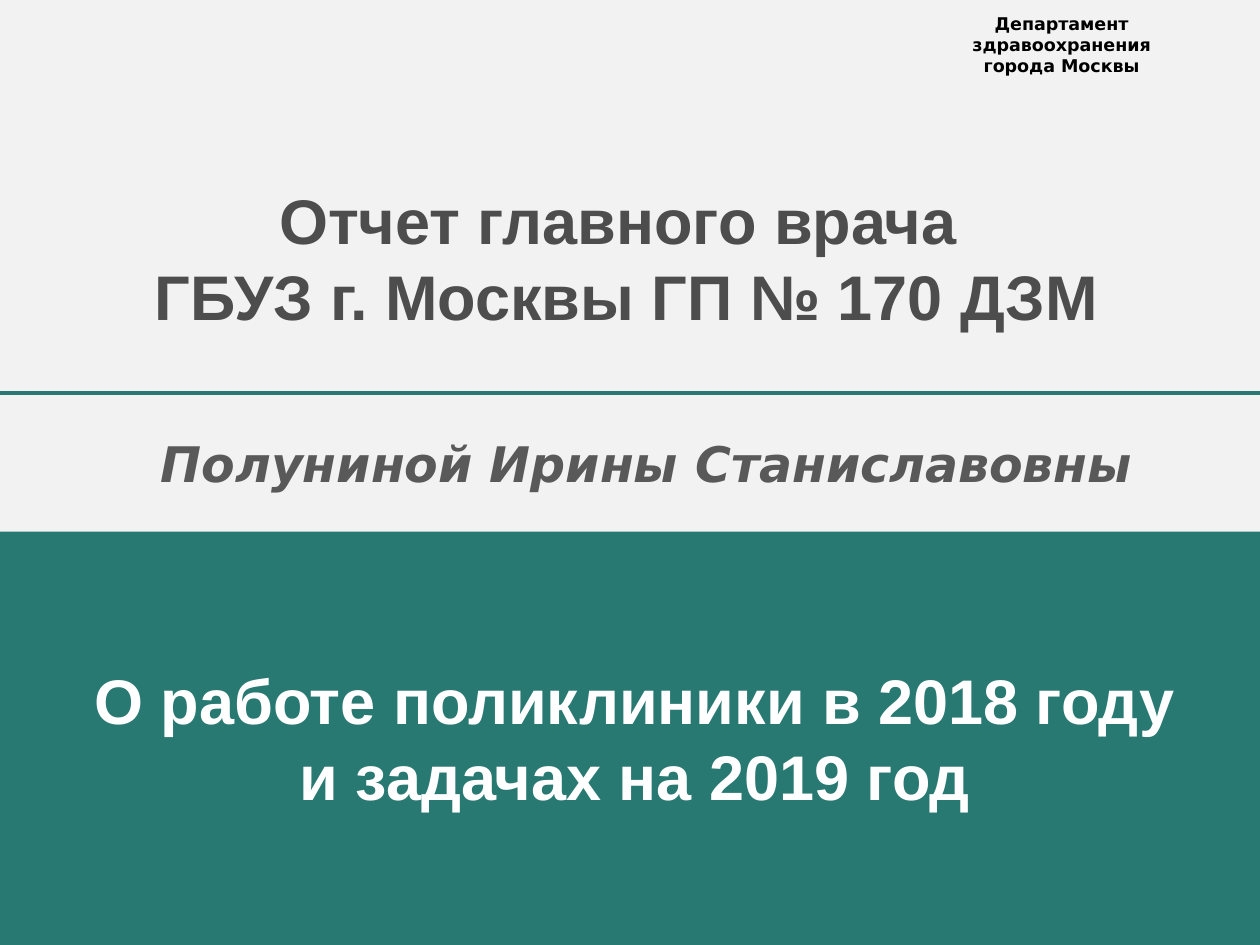
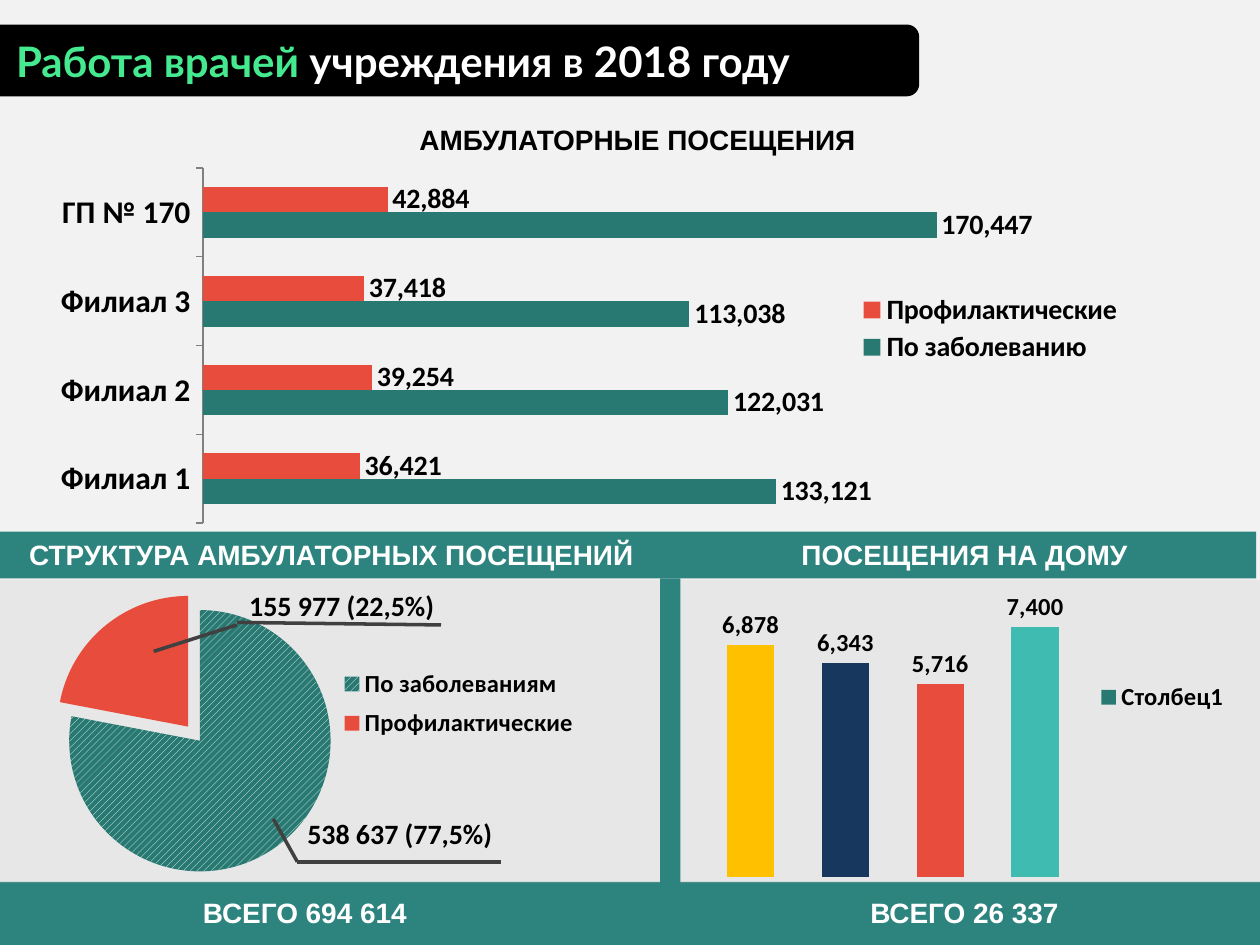
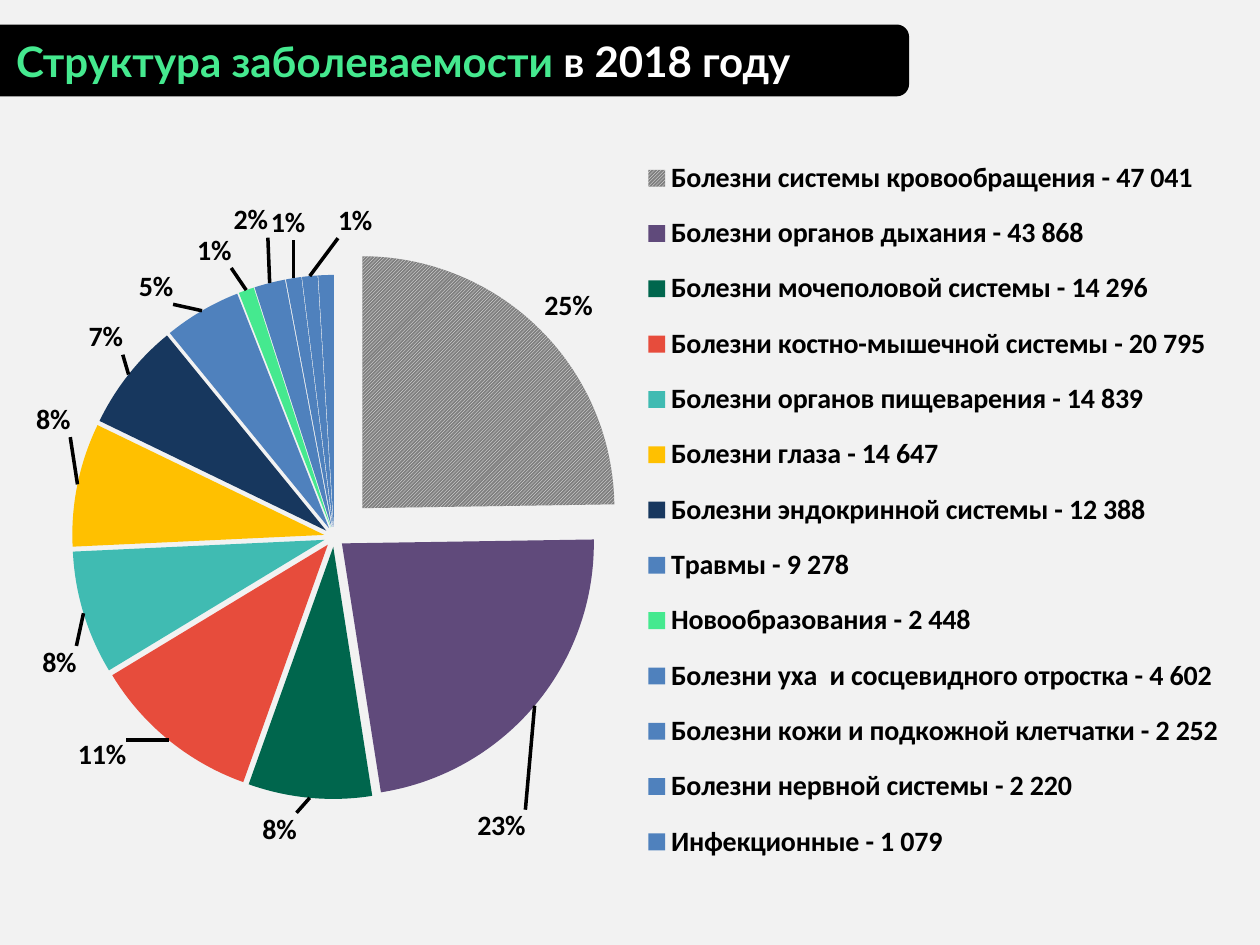
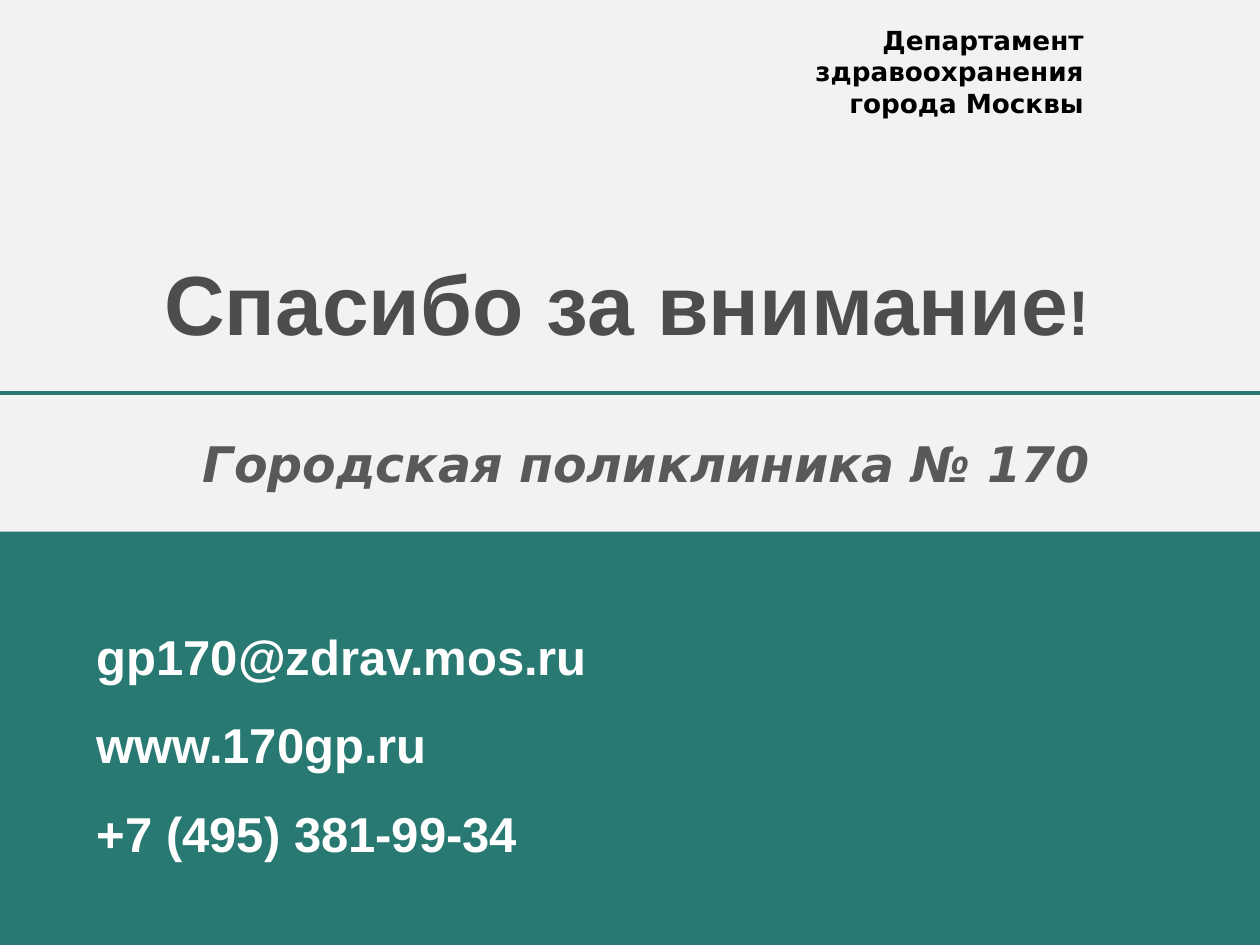
"""Builds the four-slide 2018 report of the city clinic."""
from dataclasses import dataclass
from typing import NamedTuple, Optional

import lxml.etree
import pptx
import pptx.chart.data
import pptx.dml.color
import pptx.enum.chart
import pptx.enum.dml
import pptx.enum.shapes
import pptx.enum.text
import pptx.oxml.ns
import pptx.util

COLS, ROWS = 100, 75
UNIT = pptx.util.Inches(10) // COLS
COLORS = {
    "paper": "F2F2F2", "teal": "297973", "band": "2D837D", "veil": "BFBFBF",
    "black": "000000", "white": "FFFFFF", "green": "45E98F", "title": "4D4D4D",
    "name": "595959", "callout": "404040", "red": "E74C3C", "yellow": "FFC000",
    "navy": "17375E", "aqua": "40BBB2", "grey": "808080", "purple": "604A7B",
    "forest": "00664D", "blue": "4F81BD",
}
CHART = pptx.enum.chart.XL_CHART_TYPE
SHAPE = pptx.enum.shapes.MSO_SHAPE
PATTERN = pptx.enum.dml.MSO_PATTERN
ALIGN = pptx.enum.text.PP_ALIGN
DEPARTMENT = "Департамент здравоохранения города Москвы"
qn = pptx.oxml.ns.qn


class Box(NamedTuple):
    """A place on the grid, in columns and rows."""
    col: float
    row: float
    cols: float
    rows: float


class Run(NamedTuple):
    """A stretch of text in one style."""
    text: str
    size: float
    color: str
    font: str = "Arial"
    italic: bool = False


class Line(NamedTuple):
    """A straight line on the grid."""
    col1: float
    row1: float
    col2: float
    row2: float


class Layout(NamedTuple):
    """A place inside a chart, in shares of its size."""
    x: float
    y: float
    w: float
    h: float


class Series(NamedTuple):
    """One named row of chart values."""
    name: str
    values: tuple
    color: str = "teal"


@dataclass
class ChartSpec:
    """What a chart shows and how it is laid out."""
    kind: CHART
    box: Box
    categories: tuple
    series: tuple
    plot: Layout
    legend: Layout
    legend_size: int
    point_colors: tuple = ()
    pattern: Optional[PATTERN] = None
    explosions: tuple = ()
    gap: int = 150
    top: int = 0
    label_size: int = 0
    label_shifts: tuple = ()


def rgb(name: str) -> pptx.dml.color.RGBColor:
    """Return a colour of the palette."""
    return pptx.dml.color.RGBColor.from_string(COLORS[name])


def grid(*steps: float) -> list:
    """Turn grid steps into lengths."""
    return [round(step * UNIT) for step in steps]


def child(parent, tag: str, **attrs):
    """Append an XML element."""
    return lxml.etree.SubElement(parent, qn(tag), **attrs)


def style_font(font, size: float, color: str = "black", name: str = "Calibri",
               bold: bool = True) -> None:
    """Set the look of a font."""
    font.size = pptx.util.Pt(size)
    font.name = name
    font.bold = bold
    font.color.rgb = rgb(color)


def write(tf, paragraphs: list, align: ALIGN, spacing: Optional[float] = None) -> None:
    """Fill a text frame run by run."""
    for i, runs in enumerate(paragraphs):
        p = tf.paragraphs[0] if i == 0 else tf.add_paragraph()
        p.alignment = align
        if spacing:
            p.line_spacing = spacing
        for run in runs:
            r = p.add_run()
            r.text = run.text
            style_font(r.font, run.size, run.color, run.font)
            if run.italic:
                r.font.italic = True


def add_text(slide, box: Box, *paragraphs: list, align: ALIGN = ALIGN.CENTER,
             flush: bool = False, wrap: bool = True,
             spacing: Optional[float] = None) -> None:
    """Add a text box."""
    tf = slide.shapes.add_textbox(*grid(*box)).text_frame
    tf.word_wrap = wrap
    tf.auto_size = pptx.enum.text.MSO_AUTO_SIZE.SHAPE_TO_FIT_TEXT
    if flush:
        tf.margin_left = tf.margin_right = tf.margin_top = tf.margin_bottom = 0
    write(tf, list(paragraphs), align, spacing)


def add_block(slide, box: Box, color: str, kind: SHAPE = SHAPE.RECTANGLE,
              alpha: int = 100):
    """Add a filled shape without an outline."""
    sp = slide.shapes.add_shape(kind, *grid(*box))
    sp.shadow.inherit = False
    sp.fill.solid()
    sp.fill.fore_color.rgb = rgb(color)
    sp.line.fill.background()
    if alpha < 100:
        clr = sp._element.spPr.find(".//" + qn("a:srgbClr"))
        child(clr, "a:alpha", val=str(alpha * 1000))
    return sp


def add_line(slide, line: Line, color: str, width: float) -> None:
    """Add a straight line."""
    sp = slide.shapes.add_connector(pptx.enum.shapes.MSO_CONNECTOR.STRAIGHT, *grid(*line))
    sp.line.color.rgb = rgb(color)
    sp.line.width = pptx.util.Pt(width)
    child(sp._element.spPr, "a:effectLst")


def add_heading(slide, cols: float, key: str, rest: str) -> None:
    """Add the black title band."""
    sp = add_block(slide, Box(-2, 2, cols, 5.6), "black", SHAPE.FLOWCHART_ALTERNATE_PROCESS)
    sp.line.color.rgb = rgb("black")
    sp.line.width = pptx.util.Pt(0.75)
    tf = sp.text_frame
    tf.margin_left = grid(3)[0]
    tf.vertical_anchor = pptx.enum.text.MSO_ANCHOR.MIDDLE
    runs = [Run(key, 24, "green", "Lato"), Run(rest, 24, "white", "Lato")]
    write(tf, [runs], ALIGN.LEFT)


def add_cover(slide, name: str) -> None:
    """Add the parts shared by the first and last slides."""
    add_block(slide, Box(-0.4, 42.2, 101, 32.8), "teal")
    add_line(slide, Line(-0.6, 31.2, COLS, 31.2), "teal", 2.25)
    add_text(slide, Box(4.5, 34.4, 93.6, 4.7),
             [Run(name, 28, "name", "DejaVu Sans", True)], flush=True)


def set_layout(parent, index: int, layout: Layout, inner: bool = False) -> None:
    """Fix the place of a chart part."""
    for old in parent.findall(qn("c:layout")):
        parent.remove(old)
    element = lxml.etree.Element(qn("c:layout"))
    manual = child(element, "c:manualLayout")
    if inner:
        child(manual, "c:layoutTarget", val="inner")
    for axis in "xy":
        child(manual, f"c:{axis}Mode", val="edge")
    for part, value in layout._asdict().items():
        child(manual, f"c:{part}", val=str(value))
    parent.insert(index, element)


def color_points(series, spec: ChartSpec) -> None:
    """Fill the points of a series and pull slices apart."""
    for i, color in enumerate(spec.point_colors):
        fill = series.points[i].format.fill
        if i == 0 and spec.pattern:
            fill.patterned()
            fill.pattern = spec.pattern
            fill.fore_color.rgb = rgb("white")
            fill.back_color.rgb = rgb(color)
        else:
            fill.solid()
            fill.fore_color.rgb = rgb(color)
    for point, share in zip(series._element.findall(qn("c:dPt")), spec.explosions):
        explosion = lxml.etree.Element(qn("c:explosion"), val=str(share))
        point.find(qn("c:spPr")).addprevious(explosion)


def label_values(series, size: int) -> None:
    """Show values at the bar ends."""
    labels = series.data_labels
    labels.show_value = True
    labels.number_format = "#,##0"
    labels.number_format_is_linked = False
    labels.position = pptx.enum.chart.XL_LABEL_POSITION.OUTSIDE_END
    style_font(labels.font, size)


def label_slices(series, spec: ChartSpec) -> None:
    """Show percentages beside the slices, moved by the given shifts."""
    outside = pptx.enum.chart.XL_LABEL_POSITION.OUTSIDE_END
    labels = series.data_labels
    labels.show_percentage = True
    labels.show_value = False
    labels.position = outside
    style_font(labels.font, spec.label_size)
    for i, shift in enumerate(spec.label_shifts):
        label = series.points[i].data_label
        label.position = outside
        style_font(label.font, spec.label_size)
        element = labels._element.findall(qn("c:dLbl"))[i]
        if shift is None:
            for part in list(element)[1:]:
                element.remove(part)
            child(element, "c:delete", val="1")
            continue
        element.find(qn("c:showVal")).set("val", "0")
        element.find(qn("c:showPercent")).set("val", "1")
        layout = lxml.etree.Element(qn("c:layout"))
        manual = child(layout, "c:manualLayout")
        for axis, value in zip("xy", shift):
            child(manual, f"c:{axis}", val=str(value))
        element.insert(1, layout)
    for old in labels._element.findall(qn("c:showLeaderLines")):
        labels._element.remove(old)
    child(labels._element, "c:showLeaderLines", val="1")
    ln = child(child(child(labels._element, "c:leaderLines"), "c:spPr"), "a:ln", w="25400")
    child(child(ln, "a:solidFill"), "a:srgbClr", val=COLORS["black"])


def style_axes(chart, spec: ChartSpec) -> None:
    """Hide the value axis and tidy the category axis."""
    chart.value_axis.visible = False
    chart.value_axis.has_major_gridlines = False
    chart.value_axis.minimum_scale = 0
    chart.value_axis.maximum_scale = spec.top
    axis = chart.category_axis
    axis.visible = spec.kind == CHART.BAR_CLUSTERED
    axis.major_tick_mark = pptx.enum.chart.XL_TICK_MARK.OUTSIDE
    axis.format.line.color.rgb = rgb("grey")
    style_font(axis.tick_labels.font, 18)


def add_chart(slide, spec: ChartSpec) -> None:
    """Add a chart as its spec says."""
    data = pptx.chart.data.CategoryChartData()
    data.categories = spec.categories
    for row in spec.series:
        data.add_series(row.name, row.values)
    chart = slide.shapes.add_chart(spec.kind, *grid(*spec.box), data).chart
    pie = spec.kind == CHART.PIE
    chart.has_title = False
    style_font(chart.font, 18, bold=False)
    chart.has_legend = True
    chart.legend.position = pptx.enum.chart.XL_LEGEND_POSITION.RIGHT
    chart.legend.include_in_layout = False
    style_font(chart.legend.font, spec.legend_size)
    root = chart._chartSpace
    set_layout(root.find(".//" + qn("c:plotArea")), 0, spec.plot, inner=True)
    legend = root.find(".//" + qn("c:legend"))
    set_layout(legend, len(legend.findall(qn("c:legendPos"))), spec.legend)
    plot = chart.plots[0]
    plot.vary_by_categories = pie
    if not pie:
        plot.gap_width = spec.gap
        style_axes(chart, spec)
    for series, row in zip(plot.series, spec.series):
        if not pie:
            series.format.fill.solid()
            series.format.fill.fore_color.rgb = rgb(row.color)
            label_values(series, spec.label_size)
        color_points(series, spec)
        if spec.label_shifts:
            label_slices(series, spec)


VISITS = ChartSpec(
    CHART.BAR_CLUSTERED, Box(2, 11.8, 100.8, 38.6),
    ("Филиал 1", "Филиал 2", "Филиал 3", "ГП № 170"),
    (Series("По заболеванию", (133121, 122031, 113038, 170447)),
     Series("Профилактические", (36421, 39254, 37418, 42884), "red")),
    Layout(0.14, 0.04, 0.61, 0.73), Layout(0.63, 0.29, 0.26, 0.16), 16,
    top=180000, label_size=16)

VISIT_SHARES = ChartSpec(
    CHART.PIE, Box(-0.7, 46, 54.6, 26.6), ("По заболеваниям", "Профилактические"),
    (Series("Series 1", (78, 22)),),
    Layout(0.01, 0.07, 0.57, 0.78), Layout(0.5, 0.24, 0.36, 0.26), 14,
    ("teal", "red"), PATTERN.WIDE_UPWARD_DIAGONAL, (7, 7))

HOME_VISITS = ChartSpec(
    CHART.COLUMN_CLUSTERED, Box(51.6, 47, 52.8, 27.6), ("1", "2", "3", "4"),
    (Series("Столбец1", (6878, 6343, 5716, 7400)),),
    Layout(0.08, 0.04, 0.57, 0.78), Layout(0.66, 0.24, 0.22, 0.12), 14,
    ("yellow", "navy", "red", "aqua"), gap=100, top=8000, label_size=14)

DISEASES = ChartSpec(
    CHART.PIE, Box(-2, 9.9, 100.1, 60.6),
    ("Болезни системы кровообращения - 47 041", "Болезни органов дыхания - 43 868",
     "Болезни мочеполовой системы - 14 296", "Болезни костно-мышечной системы - 20 795",
     "Болезни органов пищеварения - 14 839", "Болезни глаза - 14 647",
     "Болезни эндокринной системы - 12 388", "Травмы - 9 278", "Новообразования - 2 448",
     "Болезни уха  и сосцевидного отростка - 4 602",
     "Болезни кожи и подкожной клетчатки - 2 252", "Болезни нервной системы - 2 220",
     "Инфекционные - 1 079"),
    (Series("Series 1", (25, 23, 8, 11, 8, 8, 7, 5, 1, 2, 1, 1, 1)),),
    Layout(0.02, 0.21, 0.53, 0.66), Layout(0.53, 0.02, 0.46, 0.97), 16,
    ("grey", "purple", "forest", "red", "aqua", "yellow", "navy", "blue", "green")
    + ("blue",) * 4,
    PATTERN.DARK_UPWARD_DIAGONAL, (16,) + (4,) * 12, label_size=16,
    label_shifts=((0, 0), (-0.05, 0.13), (-0.01, 0.01), (-0.03, -0.01), (0, 0.04),
                  (0, -0.06), (0, -0.02), (-0.02, 0), (-0.01, -0.02), (0, -0.05),
                  (0.01, -0.04), (0.05, -0.04), None))


def build_title(slide) -> None:
    """Build the opening slide."""
    add_cover(slide, "Полуниной Ирины Станиславовны")
    add_text(slide, Box(3.4, 14.4, 92.7, 12.1), [Run("Отчет главного врача ", 36, "title")],
             [Run("ГБУЗ г. Москвы ГП № 170 ДЗМ", 36, "title")], flush=True)
    add_text(slide, Box(7.1, 52.5, 86.6, 12.1),
             [Run("О работе поликлиники в 2018 году", 36, "white")],
             [Run("и задачах на 2019 год", 36, "white")], flush=True, wrap=False)
    add_text(slide, Box(76, 0.5, 16.5, 6.1), [Run(DEPARTMENT, 10, "black", "DejaVu Sans")])


def build_doctors(slide) -> None:
    """Build the slide on visits."""
    add_chart(slide, VISITS)
    add_block(slide, Box(-0.3, 42.2, COLS, 3.7), "band")
    add_block(slide, Box(0, 70, COLS, 5), "band")
    add_block(slide, Box(0, 46, COLS, 24.1), "veil", alpha=20)
    add_heading(slide, 74.9, "Работа врачей ", "учреждения в 2018 году")
    add_chart(slide, VISIT_SHARES)
    add_block(slide, Box(52.4, 45.9, 1.6, 24.4), "band")
    add_chart(slide, HOME_VISITS)
    for box, text, color in (
            (Box(30.3, 9.2, 40.6, 3.7), "АМБУЛАТОРНЫЕ ПОСЕЩЕНИЯ", "black"),
            (Box(-1.3, 42.2, 55.2, 3.7), "СТРУКТУРА АМБУЛАТОРНЫХ ПОСЕЩЕНИЙ", "white"),
            (Box(59, 42.2, 35.1, 3.7), "ПОСЕЩЕНИЯ НА ДОМУ", "white"),
            (Box(59, 70.6, 35.1, 3.7), "ВСЕГО 26 337", "white"),
            (Box(5.1, 70.6, 38.2, 3.7), "ВСЕГО 694 614", "white")):
        add_text(slide, box, [Run(text, 16, color)])
    for box, text, lines in (
            (Box(18.8, 46.2, 27.3, 3.7), "155 977 (22,5%)",
             (Line(12.2, 51.7, 18.8, 49.6), Line(18.8, 49.4, 35, 49.6))),
            (Box(23.4, 64.3, 25.8, 3.7), "538 637 (77,5%)",
             (Line(21.7, 65, 23.6, 68.4), Line(23.6, 68.4, 39.8, 68.4)))):
        add_text(slide, box, [Run(text, 16, "black", "Calibri")], align=ALIGN.LEFT)
        for line in lines:
            add_line(slide, line, "callout", 2)


def build_diseases(slide) -> None:
    """Build the slide on diseases."""
    add_heading(slide, 74.1, "Структура заболеваемости", " в 2018 году")
    add_chart(slide, DISEASES)


def build_thanks(slide) -> None:
    """Build the closing slide."""
    add_cover(slide, "Городская поликлиника № 170")
    contacts = ("gp170@zdrav.mos.ru", "www.170gp.ru", "+7 (495) 381-99-34")
    add_text(slide, Box(6.7, 46.9, 41.4, 21.3), *[[Run(c, 28, "white")] for c in contacts],
             align=ALIGN.LEFT, wrap=False, spacing=1.5)
    add_text(slide, Box(3.4, 20, 92.7, 8.1),
             [Run("Спасибо за внимание", 48, "title"), Run("!", 36, "title")], flush=True)
    add_text(slide, Box(55.5, 1.4, 31.5, 8.6), [Run(DEPARTMENT, 15, "black", "DejaVu Sans")],
             align=ALIGN.RIGHT)


def main() -> None:
    """Build and save the presentation."""
    prs = pptx.Presentation()
    prs.slide_width, prs.slide_height = grid(COLS, ROWS)
    fill = prs.slide_master.background.fill
    fill.solid()
    fill.fore_color.rgb = rgb("paper")
    for build in (build_title, build_doctors, build_diseases, build_thanks):
        build(prs.slides.add_slide(prs.slide_layouts[6]))
    prs.save("out.pptx")


if __name__ == "__main__":
    main()
